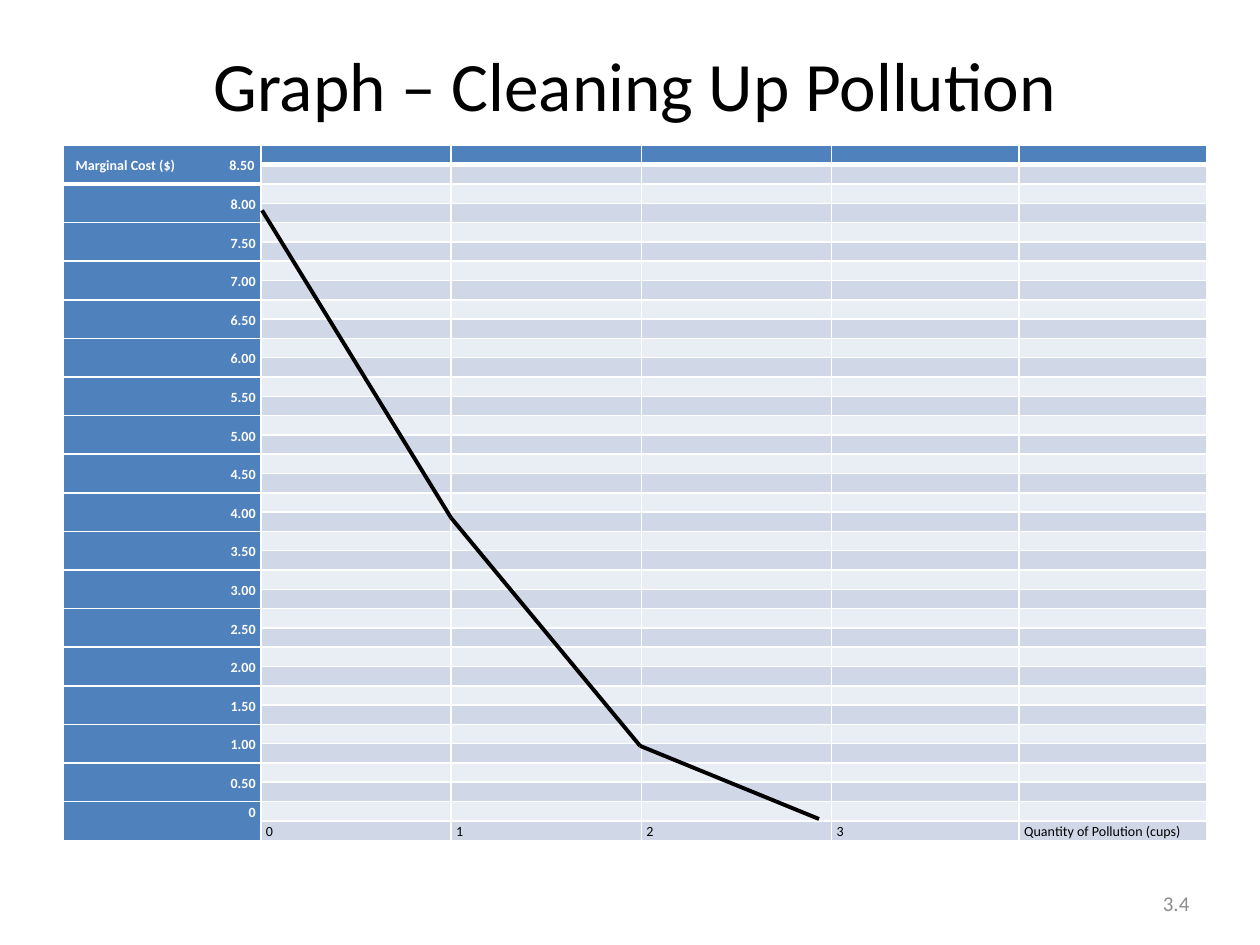
from itertools import pairwise
from lxml.etree import SubElement
from pptx import Presentation
from pptx.dml.color import RGBColor
from pptx.enum.shapes import MSO_CONNECTOR
from pptx.enum.text import MSO_ANCHOR as ANCHOR, PP_ALIGN as ALIGN
from pptx.oxml import parse_xml
from pptx.oxml.ns import nsdecls, qn
from pptx.util import Inches, Pt

BLACK = RGBColor(0x00, 0x00, 0x00)
WHITE = RGBColor(0xFF, 0xFF, 0xFF)
GRAY = RGBColor(0x8C, 0x8C, 0x8C)
BLUE = RGBColor(0x4F, 0x81, 0xBD)
DARK_BAND = RGBColor(0xD0, 0xD8, 0xE8)
LIGHT_BAND = RGBColor(0xE9, 0xED, 0xF4)

LEFT, TOP, WIDTH, HEIGHT = 0.5, 1.15, 9.08, 5.52
COLUMN_WIDTHS = [1.57, 1.51, 1.51, 1.51, 1.49, 1.49]
ROWS = 36
QUANTITIES = ["0", "1", "2", "3", "Quantity of Pollution (cups)"]
COST_POINTS = [(6.5, 6.5), (5.08, 5.92), (3.58, 4.11), (2.08, 1.67)]


def write_text(frame, text, size=8, color=BLACK, bold=False, align=ALIGN.LEFT,
               anchor=ANCHOR.TOP, spacing=None):
    frame.word_wrap = True
    frame.vertical_anchor = anchor
    paragraph = frame.paragraphs[0]
    paragraph.alignment = align
    paragraph.line_spacing = spacing
    if text:
        run = paragraph.add_run()
        run.text = text
        run.font.name = "Calibri"
        run.font.size = Pt(size)
        run.font.bold = bold
        run.font.color.rgb = color
    else:
        end = SubElement(paragraph._p, qn("a:endParaRPr"), sz=str(size * 100))
        SubElement(end, qn("a:latin"), typeface="Calibri")
    return paragraph


def style_cell(cell, fill, bottom_width):
    cell.fill.solid()
    cell.fill.fore_color.rgb = fill
    cell.margin_left = cell.margin_right = Inches(0.04)
    cell.margin_top = cell.margin_bottom = 0
    properties = cell._tc.get_or_add_tcPr()
    widths = {"lnL": 1, "lnR": 1, "lnT": 1, "lnB": bottom_width}
    for position, (side, width) in enumerate(widths.items()):
        properties.insert(position, parse_xml(
            f'<a:{side} {nsdecls("a")} w="{Pt(width)}"><a:solidFill>'
            f'<a:srgbClr val="{WHITE}"/></a:solidFill></a:{side}>'))


presentation = Presentation()
presentation.slide_width = Inches(10)
presentation.slide_height = Inches(7.5)
slide = presentation.slides.add_slide(presentation.slide_layouts[5])

title = slide.shapes.title
title.left, title.top = Inches(LEFT), Inches(0.44)
title.width, title.height = Inches(WIDTH), Inches(0.45)
write_text(title.text_frame, "Graph – Cleaning Up Pollution", size=39.6,
           align=ALIGN.CENTER, anchor=ANCHOR.MIDDLE)

table = slide.shapes.add_table(
    ROWS, len(COLUMN_WIDTHS), Inches(LEFT), Inches(TOP), Inches(WIDTH), Inches(HEIGHT)).table
for column, width in zip(table.columns, COLUMN_WIDTHS):
    column.width = Inches(width)
for row in table.rows:
    row.height = Inches(HEIGHT / ROWS)

for row in range(ROWS):
    band = BLUE if row == 0 else DARK_BAND if row % 2 else LIGHT_BAND
    for column in range(len(COLUMN_WIDTHS)):
        cell = table.cell(row, column)
        header_edge = row == 0 or (row == 1 and column == 0)
        style_cell(cell, BLUE if column == 0 else band, 3 if header_edge else 1)
        if column:
            label = QUANTITIES[column - 1] if row == ROWS - 1 else ""
            write_text(cell.text_frame, label, spacing=1.15)
        elif row % 2:
            write_text(cell.text_frame, "", spacing=1.15)
        else:
            cost = (ROWS - 2 - row) / 4
            last = row == ROWS - 2
            label = "0" if last else f"{cost:.2f}"
            paragraph = write_text(
                cell.text_frame, label if row else f"Marginal Cost ($)\t{label}",
                color=WHITE, bold=True, align=ALIGN.RIGHT if row else ALIGN.LEFT, spacing=1.15)
            cell.vertical_anchor = ANCHOR.TOP if last else ANCHOR.MIDDLE
            if row == 0:
                cell.margin_left = Inches(0.1)
                tabs = SubElement(paragraph._p.get_or_add_pPr(), qn("a:tabLst"))
                SubElement(tabs, qn("a:tab"), pos=str(Inches(1.42)), algn="r")
for row in range(0, ROWS, 2):
    table.cell(row, 0).merge(table.cell(row + 1, 0))

for start, end in pairwise(COST_POINTS):
    segment = slide.shapes.add_connector(
        MSO_CONNECTOR.STRAIGHT, *(Inches(value) for value in start + end))
    segment.line.color.rgb = BLACK
    segment.line.width = Pt(2.25)
    SubElement(segment._element.spPr, qn("a:effectLst"))

page_number = slide.shapes.add_textbox(Inches(7.75), Inches(6.97), Inches(3.17), Inches(0.4))
write_text(page_number.text_frame, "3.4", size=12, color=GRAY,
           align=ALIGN.CENTER, anchor=ANCHOR.MIDDLE)

presentation.save("out.pptx")
